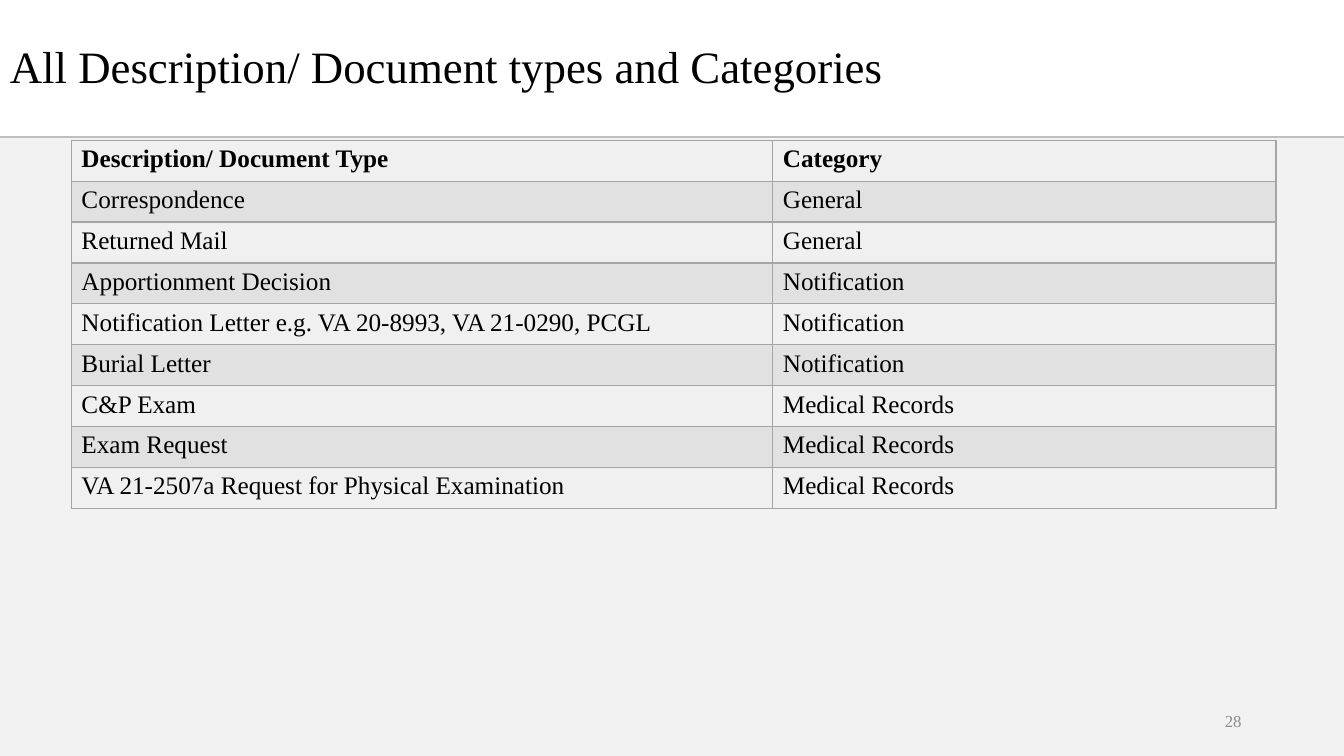
from lxml import etree
from pptx import Presentation, util as u
from pptx.dml.color import RGBColor
from pptx.enum import shapes, text
from pptx.oxml import ns

HUES = {"body": "F2F2F2", "rule": "BFBFBF", "edge": "A5A5A5", "light": "F0F0F0",
        "dark": "E1E1E1", "ink": "000000", "page": "8C8C8C"}
COLS, ROWS = 160, 90
TYPES = [
    ("Description/ Document Type", "Category"),
    ("Correspondence", "General"),
    ("Returned Mail", "General"),
    ("Apportionment Decision", "Notification"),
    ("Notification Letter e.g. VA 20-8993, VA 21-0290, PCGL", "Notification"),
    ("Burial Letter", "Notification"),
    ("C&P Exam", "Medical Records"),
    ("Exam Request", "Medical Records"),
    ("VA 21-2507a Request for Physical Examination", "Medical Records"),
]


class Deck:
    """Style and current slide; lengths are columns and rows of a grid."""

    def __init__(self):
        self.prs = Presentation()
        self.prs.slide_width, self.prs.slide_height = u.Inches(13.33), u.Inches(7.5)
        self.slide = self.prs.slides.add_slide(self.prs.slide_layouts[6])
        self.face = "Times New Roman"

    def x(self, col):
        return round(self.prs.slide_width * col / COLS)

    def y(self, row):
        return round(self.prs.slide_height * row / ROWS)

    def box(self, col, row, wide, high):
        return self.x(col), self.y(row), self.x(wide), self.y(high)

    def hue(self, name):
        return RGBColor.from_string(HUES[name])

    def style(self, para, size, hue="ink", bold=False):
        font = para.font
        font.name, font.size, font.bold = self.face, u.Pt(size), bold
        font.color.rgb = self.hue(hue)

    def panel(self, area, hue):
        rect = self.slide.shapes.add_shape(shapes.MSO_SHAPE.RECTANGLE, *self.box(*area))
        rect.shadow.inherit = False
        rect.fill.solid()
        rect.fill.fore_color.rgb = self.hue(hue)
        rect.line.fill.background()

    def rule(self, row, hue, width):
        line = self.slide.shapes.add_connector(
            shapes.MSO_CONNECTOR.STRAIGHT, 0, self.y(row), self.x(COLS), self.y(row))
        line.line.color.rgb, line.line.width = self.hue(hue), u.Pt(width)
        etree.SubElement(line._element.spPr, ns.qn("a:effectLst"))

    def label(self, area, words, size, hue="ink", align=text.PP_ALIGN.LEFT, space=1.0):
        frame = self.slide.shapes.add_textbox(*self.box(*area)).text_frame
        frame.word_wrap = True
        frame.vertical_anchor = text.MSO_ANCHOR.MIDDLE
        para = frame.paragraphs[0]
        para.text, para.alignment, para.line_spacing = words, align, space
        self.style(para, size, hue)

    def border(self, cell, hue, width):
        props = cell._tc.get_or_add_tcPr()
        for spot, side in enumerate(("lnL", "lnR", "lnT", "lnB")):
            line = etree.Element(ns.qn("a:" + side), w=str(u.Pt(width)))
            fill = etree.SubElement(line, ns.qn("a:solidFill"))
            etree.SubElement(fill, ns.qn("a:srgbClr"), val=HUES[hue])
            props.insert(spot, line)

    def table(self, area, data, wides, size):
        grid = self.slide.shapes.add_table(len(data), len(wides), *self.box(*area)).table
        for col, wide in zip(grid.columns, wides):
            col.width = self.x(wide)
        for i, row in enumerate(data):
            grid.rows[i].height = self.y(area[3] / len(data))
            for j, words in enumerate(row):
                cell = grid.cell(i, j)
                cell.text = words
                cell.fill.solid()
                cell.fill.fore_color.rgb = self.hue("dark" if i % 2 else "light")
                self.border(cell, "edge", 1)
                self.style(cell.text_frame.paragraphs[0], size, bold=i == 0)


def main():
    deck = Deck()
    # Backdrop
    deck.panel((0, 16.4, COLS, ROWS - 16.4), "body")
    deck.rule(16.3, "rule", 1.5)
    # Page number and title
    deck.label((113, 83.4, 36, 4.8), "28", 12, "page", text.PP_ALIGN.RIGHT)
    deck.label((0, 1.8, 119, 12.8), "All Description/ Document types and Categories", 32,
               space=0.9)
    # Types and categories
    wides = (83.5, 59.9)
    deck.table((8.5, 16.7, sum(wides), 43.8), TYPES, wides, 18)
    deck.prs.save("out.pptx")


if __name__ == "__main__":
    main()
